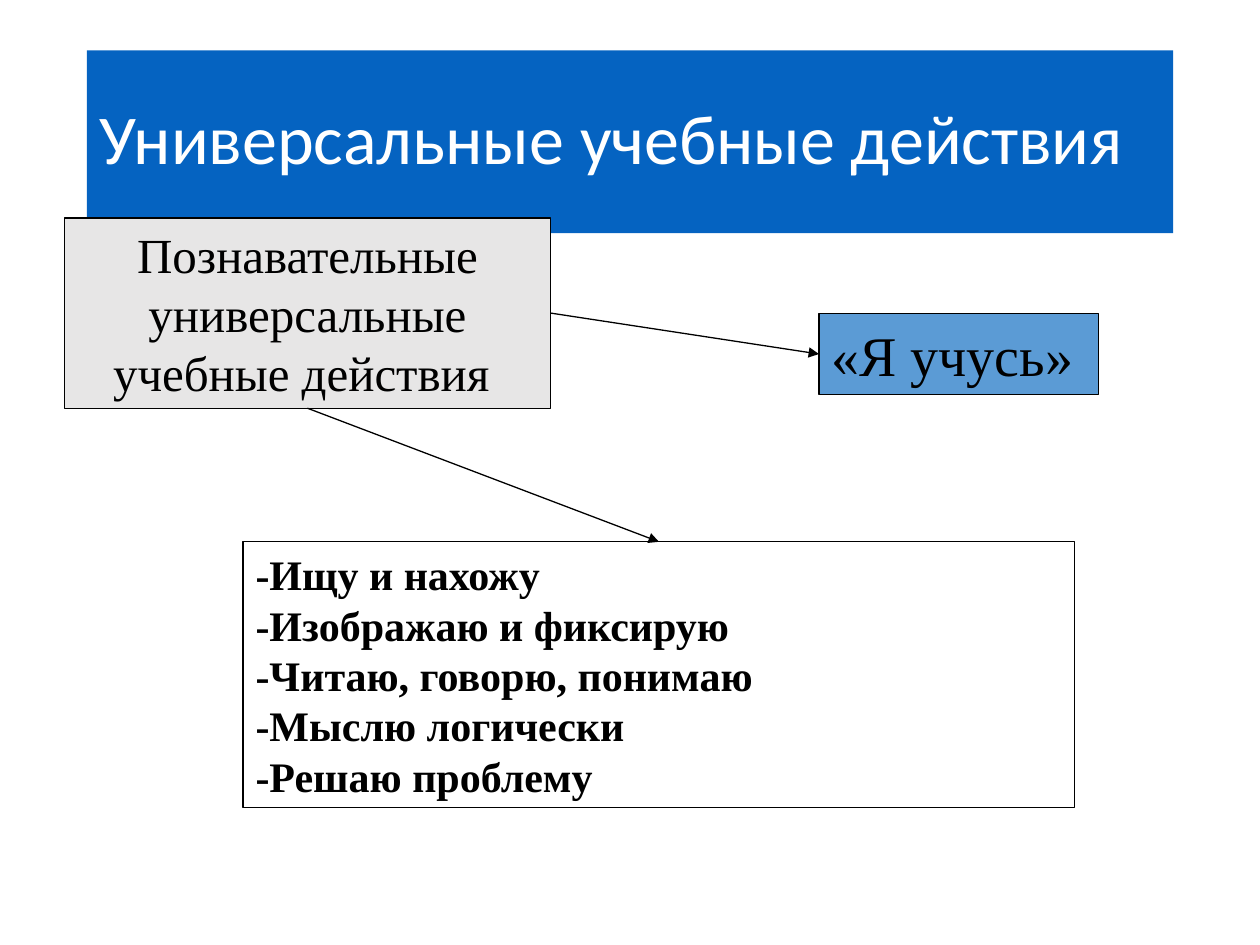
from lxml.etree import SubElement
from pptx import Presentation
from pptx.dml.color import RGBColor
from pptx.enum.shapes import MSO_CONNECTOR, MSO_SHAPE
from pptx.enum.text import MSO_ANCHOR, PP_ALIGN
from pptx.oxml.ns import qn
from pptx.util import Inches, Pt

COLORS = {
    "title": "0563C1", "white": "FFFFFF", "black": "000000",
    "gray": "E7E6E6", "blue": "5B9BD5",
}
TOP, LEFT, BOTTOM, RIGHT = range(4)  # connection sites of a rectangle


def color(name):
    return RGBColor.from_string(COLORS[name])


presentation = Presentation()
presentation.slide_width = Inches(10)
presentation.slide_height = Inches(7.5)
slide = presentation.slides.add_slide(presentation.slide_layouts[6])

# Grid of 100 columns by 75 rows
column = presentation.slide_width / 100
row = presentation.slide_height / 75

# Boxes, from back to front: place is left, top, width, height in grid units
serif = "Times New Roman"
boxes = {
    "title": dict(
        place=(6.9, 4, 86.2, 14.5), fill="title", outline=None, wrap=True,
        lines=["Универсальные учебные действия"],
        align=PP_ALIGN.LEFT, spacing=0.9, text_color="white",
        font=dict(name="Calibri", size=Pt(40), bold=False)),
    "actions": dict(
        place=(5.1, 17.3, 38.6, 15.1), fill="gray", outline="black", wrap=True,
        lines=["Познавательные универсальные учебные действия "],
        align=PP_ALIGN.CENTER, spacing=1.0, text_color="black",
        font=dict(name=serif, size=Pt(28), bold=False)),
    "skills": dict(
        place=(19.3, 43, 66, 21.1), fill="white", outline="black", wrap=True,
        lines=["-Ищу и нахожу", "-Изображаю и фиксирую",
               "-Читаю, говорю, понимаю", "-Мыслю логически",
               "-Решаю проблему"],
        align=PP_ALIGN.LEFT, spacing=1.0, text_color="black",
        font=dict(name=serif, size=Pt(24), bold=True)),
    "learning": dict(
        place=(65, 24.9, 22.2, 6.4), fill="blue", outline="black", wrap=False,
        lines=["«Я учусь» "],
        align=PP_ALIGN.JUSTIFY, spacing=1.0, text_color="black",
        font=dict(name=serif, size=Pt(32), bold=False)),
}

shapes = {}
for name, box in boxes.items():
    left, top, width, height = box["place"]
    shape = slide.shapes.add_shape(
        MSO_SHAPE.RECTANGLE, round(left * column), round(top * row),
        round(width * column), round(height * row))
    shapes[name] = shape
    shape.shadow.inherit = False
    shape.fill.solid()
    shape.fill.fore_color.rgb = color(box["fill"])
    if box["outline"]:
        shape.line.color.rgb = color(box["outline"])
        shape.line.width = Pt(0.75)
    else:
        shape.line.fill.background()

    # Text of the box
    frame = shape.text_frame
    frame.word_wrap = box["wrap"]
    frame.vertical_anchor = MSO_ANCHOR.MIDDLE
    frame.text = "\n".join(box["lines"])
    for paragraph in frame.paragraphs:
        paragraph.alignment = box["align"]
        paragraph.line_spacing = box["spacing"]
        font = paragraph.runs[0].font
        font.color.rgb = color(box["text_color"])
        for attribute, value in box["font"].items():
            setattr(font, attribute, value)

# Arrows from the actions box to the other two
for start_site, target, end_site in [
    (RIGHT, "learning", LEFT),
    (BOTTOM, "skills", TOP),
]:
    arrow = slide.shapes.add_connector(MSO_CONNECTOR.STRAIGHT, 0, 0, 0, 0)
    arrow.begin_connect(shapes["actions"], start_site)
    arrow.end_connect(shapes[target], end_site)
    arrow.line.color.rgb = color("black")
    arrow.line.width = Pt(0.75)
    properties = arrow._element.spPr
    SubElement(properties.find(qn("a:ln")), qn("a:tailEnd"), type="triangle")
    SubElement(properties, qn("a:effectLst"))

presentation.save("out.pptx")
